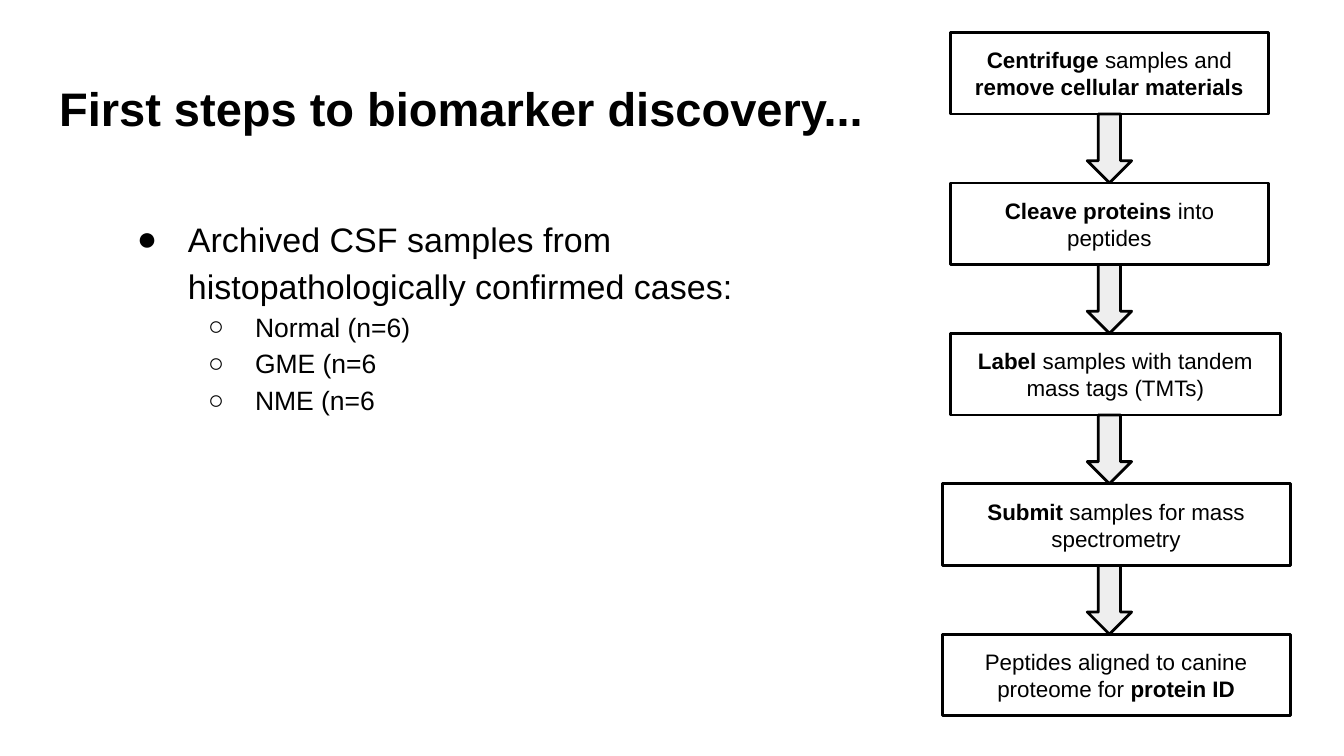
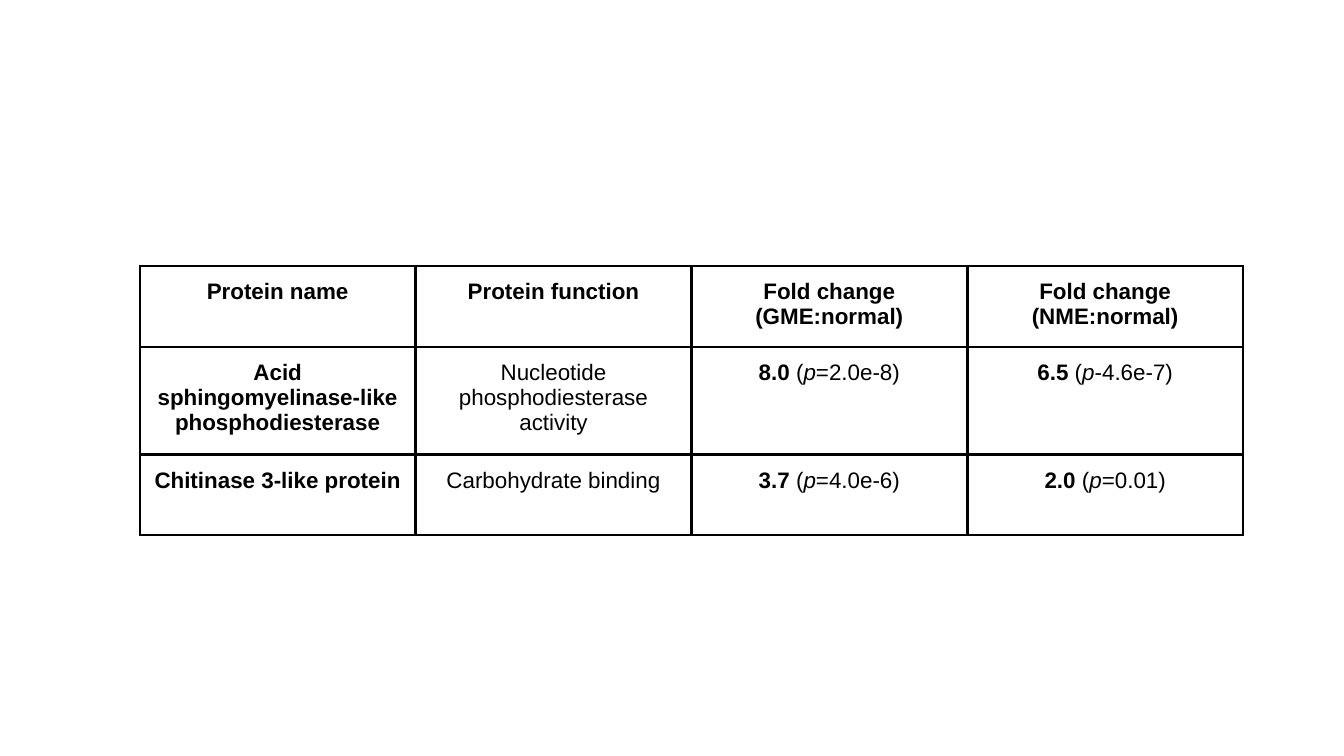
from pptx import Presentation
from pptx.dml.color import RGBColor
from pptx.enum.shapes import MSO_SHAPE
from pptx.enum.text import MSO_ANCHOR, PP_ALIGN
from pptx.oxml import parse_xml
from pptx.oxml.ns import nsdecls
from pptx.util import Inches, Pt

RECT, DOWN = MSO_SHAPE.RECTANGLE, MSO_SHAPE.DOWN_ARROW
TOP, MIDDLE = MSO_ANCHOR.TOP, MSO_ANCHOR.MIDDLE
LEFT, CENTER = PP_ALIGN.LEFT, PP_ALIGN.CENTER


class Theme:
    font = "Arial"
    ink = RGBColor.from_string("000000")
    paper = RGBColor.from_string("FFFFFF")
    arrow = RGBColor.from_string("EEEEEE")
    title, lead, item, label = 25.2, 18.2, 14.2, 12
    line = Pt(1.5)
    inset = Inches(0.1)


deck = Presentation()
deck.slide_width, deck.slide_height = Pt(720), Pt(405)
COL, ROW = deck.slide_width / 100, deck.slide_height / 100


def place(left, top, width, height):
    return [round(n) for n in (left * COL, top * ROW, width * COL, height * ROW)]


def write(owner, par, runs, size, align=CENTER):
    owner.margin_left = owner.margin_right = Theme.inset
    owner.margin_top = owner.margin_bottom = Theme.inset
    par.alignment = align
    for text, style in runs:
        run = par.add_run()
        run.text = text
        font = run.font
        font.name, font.size = Theme.font, Pt(size)
        font.color.rgb = Theme.ink
        font.bold, font.italic = style == "b", style == "i"


slide = deck.slides.add_slide(deck.slide_layouts[5])
title = slide.shapes.title
title.left, title.top, title.width, title.height = place(3.4, 8.7, 93.2, 11.2)
frame = title.text_frame
frame.word_wrap, frame.vertical_anchor = True, TOP
write(frame, frame.paragraphs[0],
      [("First steps to biomarker discovery...", "b")], Theme.title, LEFT)

body = slide.shapes.add_textbox(*place(8, 26.33, 51.9, 51.4))
frame = body.text_frame
frame.word_wrap, frame.vertical_anchor = True, TOP
points = [
    (0, "Archived CSF samples from histopathologically confirmed cases:"),
    (1, "Normal (n=6)"),
    (1, "GME (n=6"),
    (1, "NME (n=6"),
]
levels = [("●", 0.5, -0.38, Theme.lead), ("○", 1, -0.35, Theme.item)]
for n, (level, text) in enumerate(points):
    mark, margin, indent, size = levels[level]
    par = frame.add_paragraph() if n else frame.paragraphs[0]
    par.level, par.line_spacing = level, 1.15
    write(frame, par, [(text, "")], size, LEFT)
    props = par._p.get_or_add_pPr()
    props.set("marL", str(Inches(margin)))
    props.set("indent", str(Inches(indent)))
    for xml in (
        f'<a:buClr {nsdecls("a")}><a:srgbClr val="{Theme.ink}"/></a:buClr>',
        f'<a:buFont {nsdecls("a")} typeface="{Theme.font}"/>',
        f'<a:buChar {nsdecls("a")} char="{mark}"/>',
    ):
        props.append(parse_xml(xml))

steps = [
    (70.7, 23.7, [("Centrifuge", "b"), (" samples and ", ""),
                  ("remove cellular materials", "b")]),
    (70.7, 23.7, [("Cleave proteins ", "b"), ("into peptides", "")]),
    (70.7, 24.6, [("Label ", "b"), ("samples with tandem mass tags (TMTs)", "")]),
    (70.1, 25.9, [("Submit", "b"), (" samples for mass spectrometry", "")]),
    (70.1, 25.9, [("Peptides aligned to canine proteome for ", ""),
                  ("protein ID", "b")]),
]
first, pitch, tall = 4.3, 19.9, 10.8
for n, (left, width, runs) in enumerate(steps):
    top = first + n * pitch
    box = slide.shapes.add_shape(RECT, *place(left, top, width, tall))
    box.fill.background()
    frame = box.text_frame
    frame.word_wrap, frame.vertical_anchor = True, MIDDLE
    write(frame, frame.paragraphs[0], runs, Theme.label)
    parts = [box]
    if n < len(steps) - 1:
        arrow = slide.shapes.add_shape(
            DOWN, *place(80.9, top + tall, 3.3, pitch - tall))
        arrow.fill.solid()
        arrow.fill.fore_color.rgb = Theme.arrow
        parts.append(arrow)
    for part in parts:
        part.shadow.inherit = False
        part.line.color.rgb, part.line.width = Theme.ink, Theme.line

slide = deck.slides.add_slide(deck.slide_layouts[6])
rows = [
    [[("Protein name", "b")], [("Protein function", "b")],
     [("Fold change (GME:normal)", "b")], [("Fold change (NME:normal)", "b")]],
    [[("Acid sphingomyelinase-like phosphodiesterase", "b")],
     [("Nucleotide phosphodiesterase activity", "")],
     [("8.0 ", "b"), ("(", ""), ("p", "i"), ("=2.0e-8)", "")],
     [("6.5", "b"), (" (", ""), ("p", "i"), ("-4.6e-7)", "")]],
    [[("Chitinase 3-like protein", "b")], [("Carbohydrate binding", "")],
     [("3.7", "b"), (" (", ""), ("p", "i"), ("=4.0e-6)", "")],
     [("2.0", "b"), (" (", ""), ("p", "i"), ("=0.01)", "")]],
]
heights = [10.67, 14.22, 10.67]
table = slide.shapes.add_table(
    len(rows), len(rows[0]), *place(10.4, 35.2, 82.1, sum(heights))).table
table.first_row = table.horz_banding = False
for r, (cells, height) in enumerate(zip(rows, heights)):
    table.rows[r].height = round(height * ROW)
    for c, runs in enumerate(cells):
        cell = table.cell(r, c)
        cell.vertical_anchor = TOP
        write(cell, cell.text_frame.paragraphs[0], runs, Theme.label)
        props = cell._tc.get_or_add_tcPr()
        for side in "LRTB":
            props.append(parse_xml(
                f'<a:ln{side} {nsdecls("a")} w="{Theme.line}"><a:solidFill>'
                f'<a:srgbClr val="{Theme.ink}"/></a:solidFill></a:ln{side}>'))
        if r == 1:
            cell.fill.solid()
            cell.fill.fore_color.rgb = Theme.paper
        else:
            cell.fill.background()

deck.save("out.pptx")
